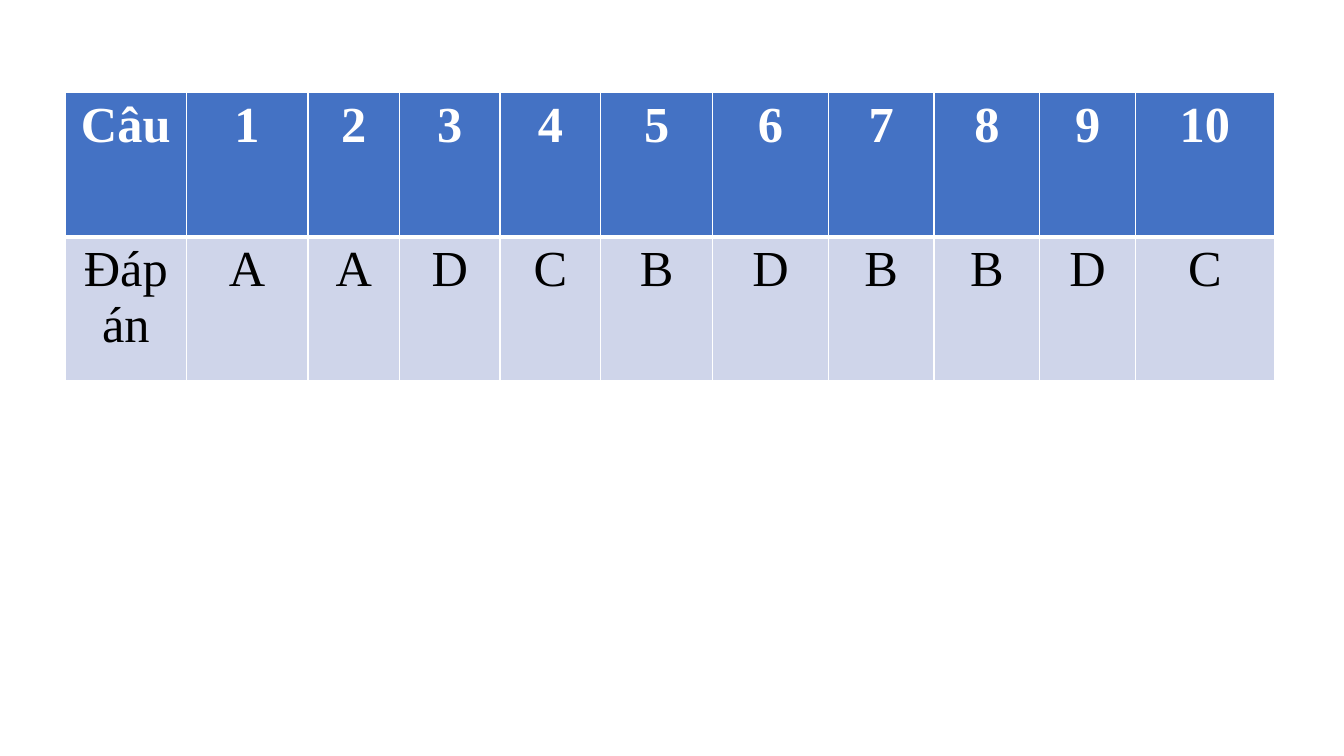
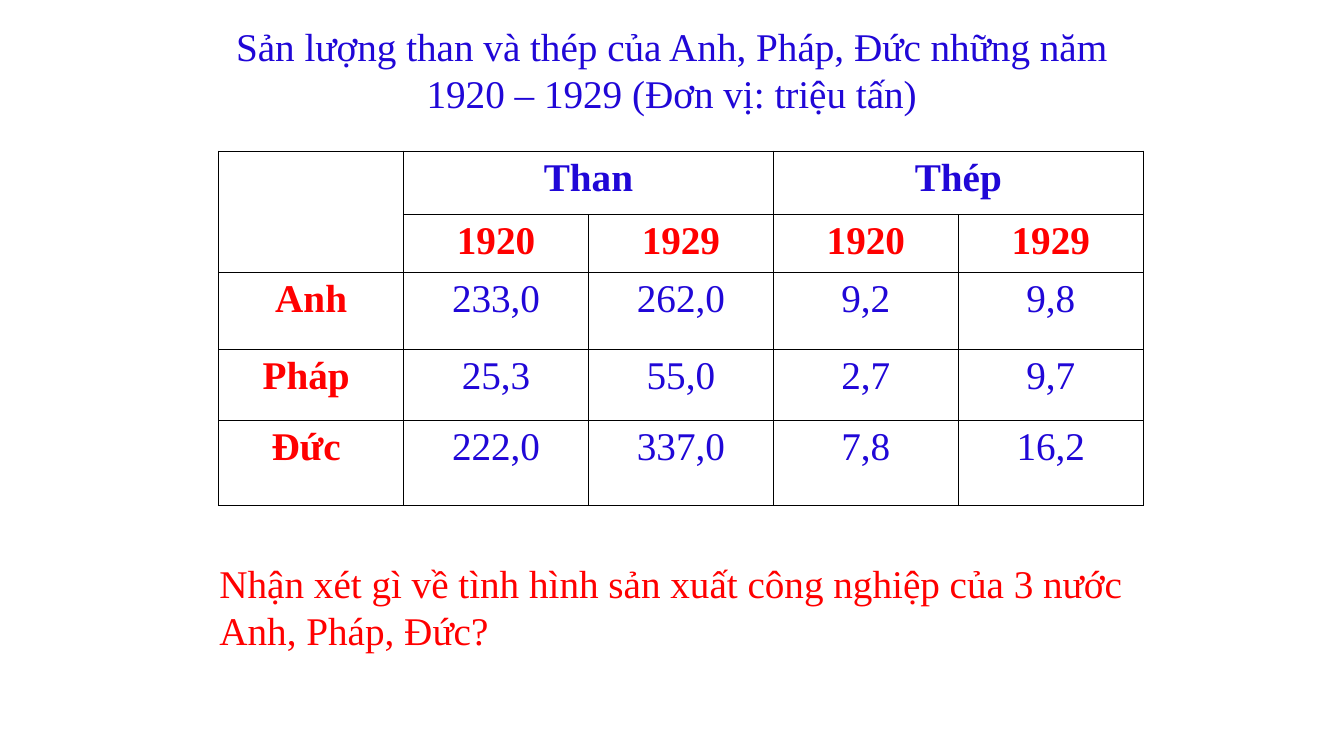
from lxml import etree
from pptx import Presentation
from pptx.dml.color import RGBColor
from pptx.enum import text
from pptx.oxml import ns
from pptx.util import Cm, Pt

FONT = "Times New Roman"
WHITE = RGBColor(0xFF, 0xFF, 0xFF)
BLACK = RGBColor(0x00, 0x00, 0x00)
HEADER_BLUE = RGBColor(0x44, 0x72, 0xC4)
PALE_BLUE = RGBColor(0xCF, 0xD5, 0xEA)
INK_BLUE = RGBColor(0x20, 0x07, 0xD7)
RED = RGBColor(0xFF, 0x00, 0x00)

ANSWERS = "AADCBDBBDC"
ANSWER_COLUMNS = [3.04, 3.07, 2.31, 2.53, 2.54, 2.82, 2.92, 2.66, 2.66, 2.42, 3.49]
OUTPUT_ROWS = [
    ["", "Than", "", "Thép", ""],
    ["", "1920", "1929", "1920", "1929"],
    ["Anh", "233,0", "262,0", "9,2", "9,8"],
    ["Pháp ", "25,3", "55,0", "2,7", "9,7"],
    ["Đức ", "222,0", "337,0", "7,8", "16,2"],
]
OUTPUT_HEIGHTS = [1.6, 1.45, 1.95, 1.79, 2.13]


def style_paragraph(paragraph, size, color, bold=False, align=text.PP_ALIGN.CENTER):
    paragraph.alignment = align
    font = paragraph.font
    font.name, font.size, font.bold = FONT, Pt(size), bold
    font.color.rgb = color


def add_border(cell, side, color, width):
    """Draw one side (L, R, T or B); call before filling the cell."""
    line = etree.SubElement(cell._tc.get_or_add_tcPr(), ns.qn(f"a:ln{side}"),
                            w=str(Pt(width)))
    fill = etree.SubElement(line, ns.qn("a:solidFill"))
    etree.SubElement(fill, ns.qn("a:srgbClr"), val=str(color))


def fill_cell(cell, words, fill, border, size, color, bold, widths):
    """Fill and outline a cell; widths overrides the 1 pt border by side."""
    for side in "LRTB":
        add_border(cell, side, border, widths.get(side, 1))
    cell.fill.solid()
    cell.fill.fore_color.rgb = fill
    cell.text = words
    style_paragraph(cell.text_frame.paragraphs[0], size, color, bold)


def add_grid(slide, left, top, columns, heights):
    table = slide.shapes.add_table(len(heights), len(columns), Cm(left), Cm(top),
                                   Cm(sum(columns)), Cm(sum(heights))).table
    table.horz_banding = False
    for column, width in zip(table.columns, columns):
        column.width = Cm(width)
    for row, height in zip(table.rows, heights):
        row.height = Cm(height)
    return table


def add_text(slide, left, top, width, words, color, align):
    frame = slide.shapes.add_textbox(Cm(left), Cm(top), Cm(width), Cm(2.65)).text_frame
    frame.word_wrap = True
    frame.text = words
    style_paragraph(frame.paragraphs[0], 28, color, align=align)


def add_answer_slide(slide):
    table = add_grid(slide, 1.65, 2.34, ANSWER_COLUMNS, [3.63, 3.63])
    questions = ["Câu ", *map(str, range(1, len(ANSWERS) + 1))]
    for col, (question, answer) in enumerate(zip(questions, ["Đáp án", *ANSWERS])):
        fill_cell(table.cell(0, col), question, HEADER_BLUE, WHITE, 36, WHITE, True, {"B": 3})
        fill_cell(table.cell(1, col), answer, PALE_BLUE, WHITE, 36, BLACK, False, {"T": 3})


def add_output_slide(slide):
    table = add_grid(slide, 5.51, 3.81, [4.66] * 5, OUTPUT_HEIGHTS)
    for row, values in enumerate(OUTPUT_ROWS):
        for col, value in enumerate(values):
            is_label = row == 1 or col == 0
            fill_cell(table.cell(row, col), value, WHITE, BLACK, 28,
                      RED if is_label else INK_BLUE, is_label or row == 0, {})
    table.cell(0, 0).merge(table.cell(1, 0))
    for col in (1, 3):
        table.cell(0, col).merge(table.cell(0, col + 1))
    add_text(slide, 5.28, 0.43, 23.3,
             "Sản lượng than và thép của Anh, Pháp, Đức những năm 1920 – 1929 "
             "(Đơn vị: triệu tấn)", INK_BLUE, text.PP_ALIGN.CENTER)
    add_text(slide, 5.28, 13.97, 23.7,
             "Nhận xét gì về tình hình sản xuất công nghiệp của 3 nước Anh, Pháp, Đức?",
             RED, text.PP_ALIGN.LEFT)


def main():
    deck = Presentation()
    deck.slide_width, deck.slide_height = Cm(33.87), Cm(19.05)
    for build in (add_answer_slide, add_output_slide):
        build(deck.slides.add_slide(deck.slide_layouts[6]))
    deck.save("out.pptx")


if __name__ == "__main__":
    main()
